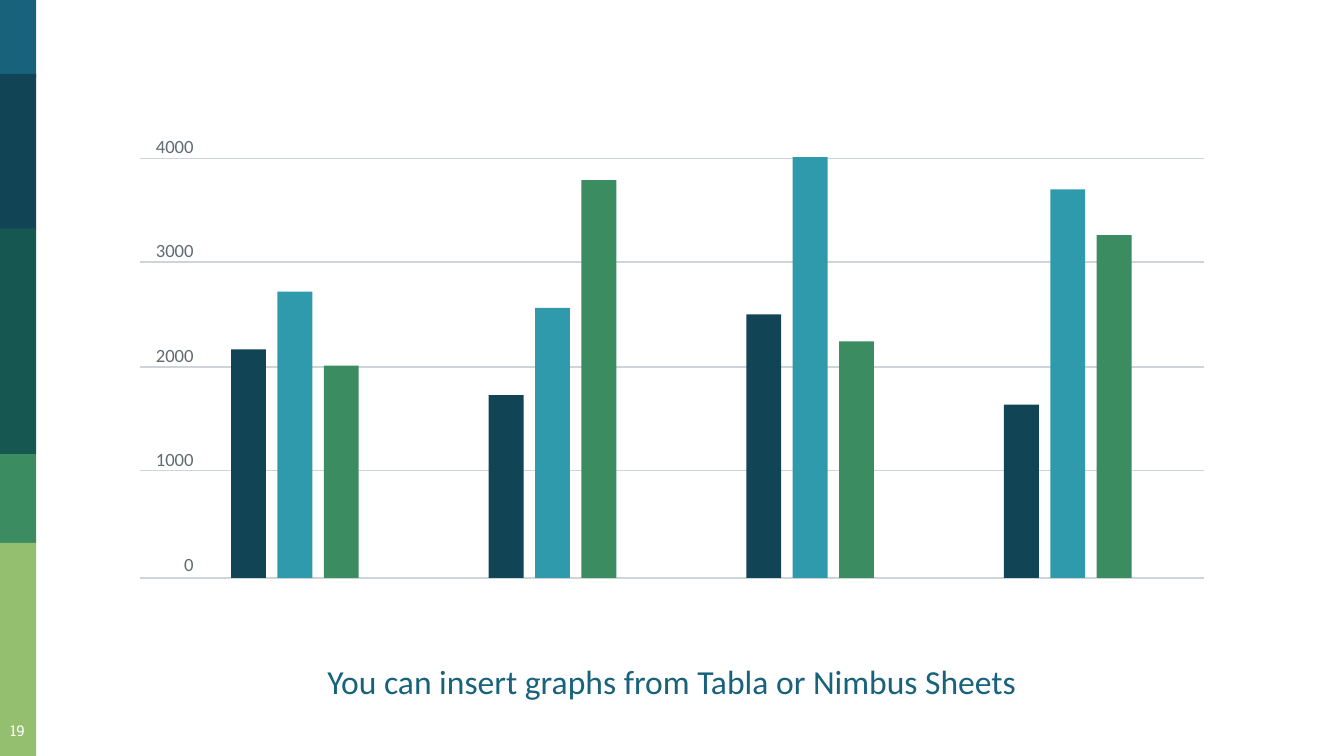
import pptx
import pptx.util
import pptx.dml.color
import pptx.enum.shapes
import pptx.enum.text
import pptx.oxml.ns
import lxml.etree

Inches, Pt = pptx.util.Inches, pptx.util.Pt
Align = pptx.enum.text.PP_ALIGN
RGB = pptx.dml.color.RGBColor.from_string
HUES = {"blue": "18637B", "navy": "114454", "pine": "165751", "green": "3B8D61",
        "lime": "94BF6E", "teal": "309AAD", "grid": "CED5D8", "gray": "5F6C70",
        "white": "FFFFFF"}

deck = pptx.Presentation()
deck.slide_width, deck.slide_height = Inches(10), Inches(10 * 9 / 16)
slide = deck.slides.add_slide(deck.slide_layouts[2])
shapes = slide.shapes
title = shapes.title._element
title.getparent().remove(title)


def add_rect(left, top, width, height, hue):
    rect = shapes.add_shape(pptx.enum.shapes.MSO_SHAPE.RECTANGLE, Inches(left),
                            Inches(top), Inches(width), Inches(height))
    rect.shadow.inherit = False
    rect.fill.solid()
    rect.fill.fore_color.rgb = RGB(HUES[hue])
    rect.line.fill.background()


def set_text(shape, lines, size, face, hue, align, inset):
    """Fill a shape with top-anchored lines in one style."""
    frame = shape.text_frame
    frame.word_wrap = True
    frame.auto_size = pptx.enum.text.MSO_AUTO_SIZE.NONE
    frame.vertical_anchor = pptx.enum.text.MSO_ANCHOR.TOP
    frame.margin_left = frame.margin_right = Inches(inset)
    frame.margin_top = frame.margin_bottom = Inches(inset)
    frame.text = "\n".join(lines)
    for para in frame.paragraphs:
        para.alignment = align
        para.font.size, para.font.name = Pt(size), face
        para.font.bold = False
        para.font.color.rgb = RGB(HUES[hue])
    return frame.paragraphs


# Side stripe
stripe = [(0, 0.58, "blue"), (0.55, 1.16, "navy"), (1.7, 1.68, "pine"),
          (3.38, 0.66, "green"), (4.04, 1.59, "lime")]
for top, height, hue in stripe:
    add_rect(0, top, 0.27, height, hue)

# Caption and page number
body = slide.placeholders[1]
body.left, body.top = Inches(0.5), Inches(4.82)
body.width, body.height = Inches(9), Inches(0.57)
paras = set_text(body, ["You can insert graphs from Tabla or Nimbus Sheets"],
                 18, "Calibri", "blue", Align.CENTER, 0.1)
paras[0].space_before = Pt(3.6)

page = shapes.add_textbox(Inches(-0.06), Inches(5.27), Inches(0.38), Inches(0.35))
set_text(page, ["19"], 8, "Roboto Slab", "white", Align.CENTER, 0.1)

# Grid lines
base = 4.3
for y in (1.18, 1.95, 2.73, 3.5, base):
    line = shapes.add_connector(pptx.enum.shapes.MSO_CONNECTOR.STRAIGHT,
                                Inches(1.04), Inches(y), Inches(8.96), Inches(y))
    line.line.color.rgb = RGB(HUES["grid"])
    line.line.width = Pt(0.75)
    lxml.etree.SubElement(line._element.spPr, pptx.oxml.ns.qn("a:effectLst"))

# Axis labels
axis = shapes.add_textbox(Inches(1.04), Inches(1), Inches(0.4), Inches(3.31))
ticks = [str(n) for n in range(4000, -1, -1000)]
paras = set_text(axis, ticks, 10, "Calibri", "gray", Align.RIGHT, 0)
for para in paras[1:]:
    para.space_before = Pt(44)
paras[-1].space_after = Pt(44)

# Bars: one row of heights per group
groups = [(1.7, 2.13, 1.58), (1.36, 2.01, 2.96), (1.96, 3.13, 1.76), (1.29, 2.89, 2.55)]
step, pitch = 5.75 / 3, 0.69 / 2
for col, group in enumerate(groups):
    for num, (height, hue) in enumerate(zip(group, ("navy", "teal", "green"))):
        left = 1.72 + step * col + pitch * num
        add_rect(left, base - height, 0.26, height, hue)

deck.save("out.pptx")
